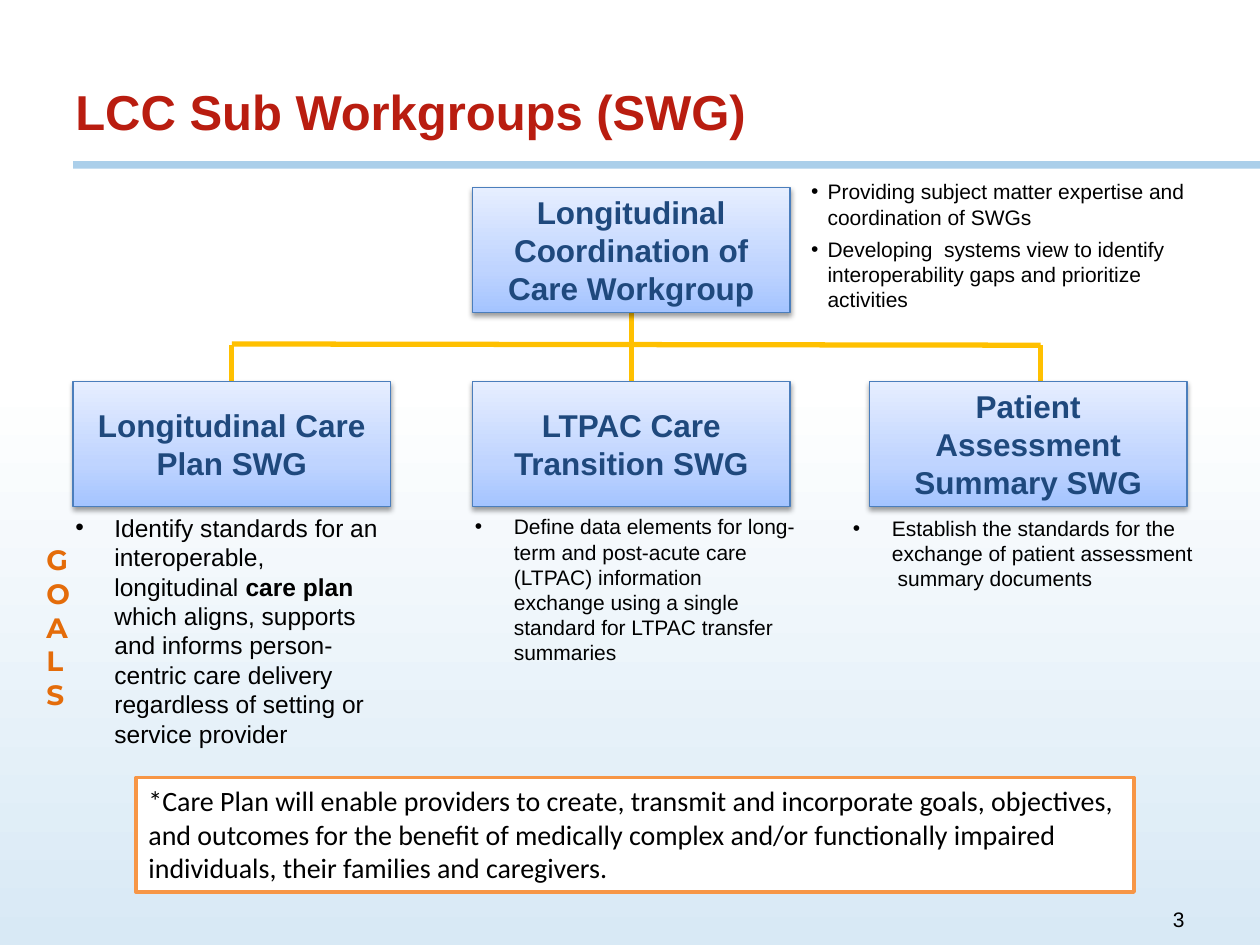
from lxml import etree
from pptx import Presentation
from pptx.dml.color import RGBColor
from pptx.enum.shapes import MSO_CONNECTOR, MSO_SHAPE
from pptx.enum.text import MSO_ANCHOR as ANCHOR, PP_ALIGN as ALIGN
from pptx.oxml import parse_xml
from pptx.oxml.ns import nsdecls, qn
from pptx.util import Inches, Pt

TITLE = "LCC Sub Workgroups (SWG)"
PARENT = "Longitudinal Coordination of Care Workgroup"
PARENT_ROLES = [
    "Providing subject matter expertise and coordination of SWGs",
    "Developing  systems view to identify interoperability gaps and prioritize activities",
]
# name, box left, goal (runs marked True are bold), goal place, goal text size
SUBGROUPS = [
    ("Longitudinal Care Plan SWG", 0.58,
     [("Identify standards for an interoperable, longitudinal ", False),
      ("care plan ", True),
      ("which aligns, supports and informs person-centric care delivery "
       "regardless of setting or service provider", False)],
     (0.5, 4.02, 2.67, 1.99), 14),
    ("LTPAC Care Transition SWG", 3.75,
     "Define data elements for long-term and post-acute care (LTPAC) information "
     "exchange using a single standard for LTPAC transfer summaries",
     (3.67, 4.03, 2.75, 1.31), 12),
    ("Patient Assessment Summary SWG", 6.9,
     "Establish the standards for the exchange of patient assessment  summary documents",
     (6.67, 4.04, 2.92, 0.71), 12),
]
NOTE = ("*Care Plan will enable providers to create, transmit and incorporate goals, "
        "objectives, and outcomes for the benefit of medically complex and/or "
        "functionally impaired individuals, their families and caregivers.")

BOX_W, BOX_H = 2.52, 0.99
PARENT_LEFT, PARENT_TOP, SUBGROUP_TOP = 3.75, 1.49, 3.03
BRANCH_Y = 2.74
BOX_GRADIENT = [(0, "A4C4FF"), (35, "BFD4FF"), (100, "E6EEFF")]
PAGE_GRADIENT = [(15, "FFFFFF"), (100, "D8E9F5")]

prs = Presentation()
prs.slide_width, prs.slide_height = Inches(10), Inches(7.5)
slide = prs.slides.add_slide(prs.slide_layouts[6])


def color(hex_code):
    return RGBColor.from_string(hex_code)


def place(at):
    return [Inches(v) for v in at]


def write(shape, paragraphs, size=12, font="Arial", ink="000000", bold=False,
          align=ALIGN.LEFT, anchor=ANCHOR.TOP, indent=None, gap=0):
    """Fill a shape with paragraphs; each is a string or a list of (text, bold)."""
    frame = shape.text_frame
    frame.word_wrap = True
    frame.vertical_anchor = anchor
    for i, content in enumerate(paragraphs):
        para = frame.paragraphs[0] if i == 0 else frame.add_paragraph()
        para.alignment = align
        para.space_before = Pt(gap if i else 0)
        para.space_after = Pt(gap)
        if indent:
            props = para._p.get_or_add_pPr()
            props.set("marL", str(Inches(indent)))
            props.set("indent", str(-Inches(indent)))
            etree.SubElement(props, qn("a:buFont")).set("typeface", "Arial")
            etree.SubElement(props, qn("a:buChar")).set("char", "•")
        runs = [(content, bold)] if isinstance(content, str) else content
        for text, strong in runs:
            run = para.add_run()
            run.text = text
            run.font.size, run.font.name, run.font.bold = Pt(size), font, strong
            run.font.color.rgb = color(ink)


def add_text(at, paragraphs, **style):
    write(slide.shapes.add_textbox(*place(at)), paragraphs, **style)


def add_rect(at, fill=None, line=None, line_width=1):
    rect = slide.shapes.add_shape(MSO_SHAPE.RECTANGLE, *place(at))
    rect.shadow.inherit = False
    if fill:
        rect.fill.solid()
        rect.fill.fore_color.rgb = color(fill)
    if line:
        rect.line.color.rgb = color(line)
        rect.line.width = Pt(line_width)
    else:
        rect.line.fill.background()
    return rect


def set_gradient(shape, stops, angle):
    shape.fill.gradient()
    grad = shape._element.spPr.find(qn("a:gradFill"))
    stop_xml = "".join(f'<a:gs pos="{pos * 1000}"><a:srgbClr val="{hex_code}"/></a:gs>'
                       for pos, hex_code in stops)
    grad.replace(grad.find(qn("a:gsLst")),
                 parse_xml(f'<a:gsLst {nsdecls("a")}>{stop_xml}</a:gsLst>'))
    grad.find(qn("a:lin")).set("ang", str(angle * 60000))


def add_group_box(left, top, name):
    box = add_rect((left, top, BOX_W, BOX_H), line="4B7EBC", line_width=0.75)
    set_gradient(box, BOX_GRADIENT, 270)
    box._element.spPr.find(qn("a:effectLst")).append(parse_xml(
        f'<a:outerShdw {nsdecls("a")} blurRad="{Pt(3.1)}" dist="{Pt(1.6)}" dir="5400000" '
        'rotWithShape="0"><a:srgbClr val="000000"><a:alpha val="38000"/></a:srgbClr>'
        '</a:outerShdw>'))
    write(box, [name], size=18, ink="1F497D", bold=True,
          align=ALIGN.CENTER, anchor=ANCHOR.MIDDLE)


def add_branch(x1, y1, x2, y2):
    branch = slide.shapes.add_connector(MSO_CONNECTOR.STRAIGHT, *place((x1, y1, x2, y2)))
    branch.line.color.rgb = color("FFC000")
    branch.line.width = Pt(3)
    etree.SubElement(branch._element.spPr, qn("a:effectLst"))


# Page background and title
set_gradient(add_rect((0, 2.21, 10, 5.29)), PAGE_GRADIENT, 90)
add_rect((0.58, 1.28, 9.42, 0.06), fill="ABCFEA")
add_text((0.5, 0.21, 6.92, 0.95), [TITLE], size=28, ink="B91D10", bold=True,
         anchor=ANCHOR.BOTTOM)

# Branches, from the parent down to each subgroup
centers = [left + BOX_W / 2 for _, left, *_ in SUBGROUPS]
centers[-1] = 8.26  # the last branch stands right of its box's left half
add_branch(centers[1], PARENT_TOP + BOX_H, centers[1], SUBGROUP_TOP)
add_branch(centers[-1], BRANCH_Y, centers[0], BRANCH_Y - 0.01)
for center in (centers[0], centers[-1]):
    add_branch(center, BRANCH_Y, center, SUBGROUP_TOP)

# Workgroups and their goals
add_group_box(PARENT_LEFT, PARENT_TOP, PARENT)
add_text((6.34, 1.37, 3.24, 1.28), PARENT_ROLES, indent=0.13, gap=2)
for name, left, goal, goal_at, goal_size in SUBGROUPS:
    add_group_box(left, SUBGROUP_TOP, name)
    add_text(goal_at, [goal], size=goal_size, indent=0.31)

# The narrow box stacks the letters one to a line
add_text((0.27, 4.2, 0.32, 1.55), ["GOALS"], size=16, font="Montserrat",
         ink="E46C0A", bold=True, anchor=ANCHOR.MIDDLE)

note = add_rect((1.08, 6.17, 7.92, 0.91), fill="FFFFFF", line="F79646", line_width=2)
write(note, [NOTE], size=16, font="Calibri")
add_text((7.17, 7.17, 2.33, 0.25), ["3"], align=ALIGN.RIGHT, anchor=ANCHOR.MIDDLE)

prs.save("out.pptx")
